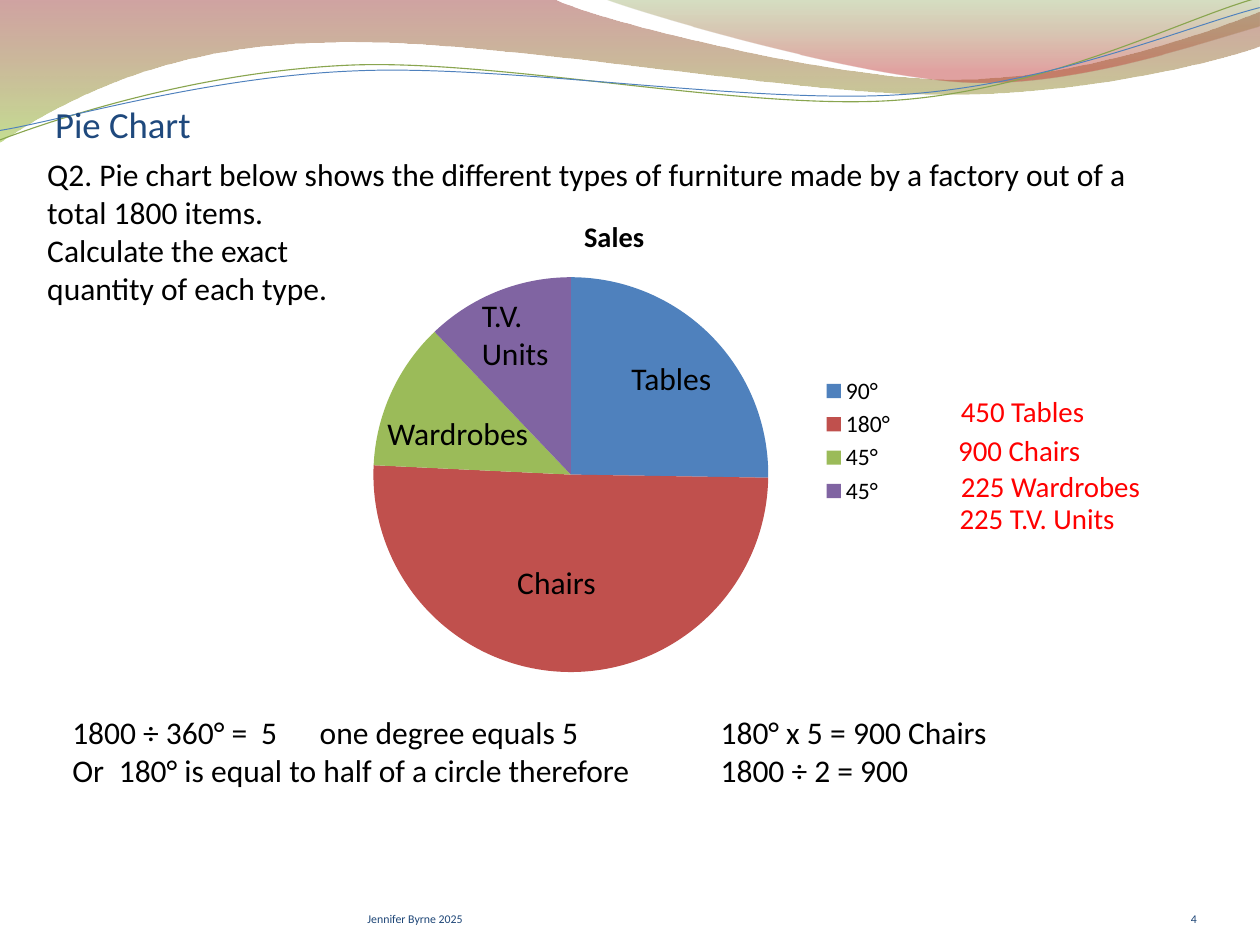
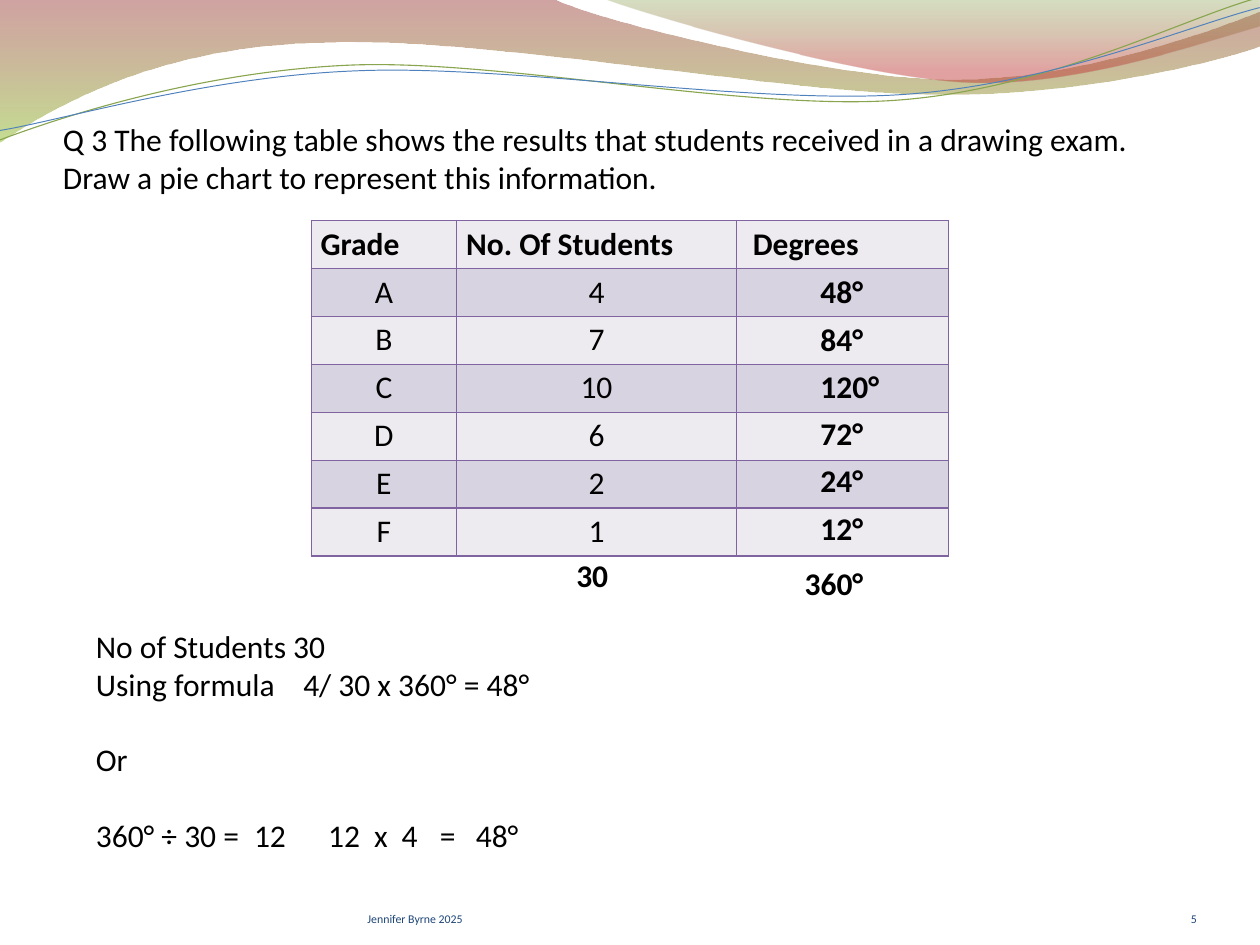
from lxml import etree
from pptx import Presentation
from pptx.chart.data import CategoryChartData
from pptx.dml.color import RGBColor
from pptx.enum.chart import XL_CHART_TYPE, XL_LEGEND_POSITION
from pptx.enum.text import MSO_ANCHOR, MSO_AUTO_SIZE, PP_ALIGN
from pptx.oxml.ns import qn
from pptx.util import Pt

PIE, LEGEND_RIGHT = XL_CHART_TYPE.PIE, XL_LEGEND_POSITION.RIGHT
TOP, BOTTOM, NO_FIT = MSO_ANCHOR.TOP, MSO_ANCHOR.BOTTOM, MSO_AUTO_SIZE.NONE
LEFT, CENTER, RIGHT = PP_ALIGN.LEFT, PP_ALIGN.CENTER, PP_ALIGN.RIGHT
FONT = "Calibri"
COLORS = {
    "text": "000000", "heading": "1F497D", "footer": "1E4677", "answer": "FF0000",
    "blue": "4F81BD", "red": "C0504D", "green": "9BBB59", "purple": "8064A2",
    "wave_line": "89A54F", "row_light": "EDEAF0", "row_dark": "D8D3E0",
}
C = {name: RGBColor.from_string(value) for name, value in COLORS.items()}


def add_wave(s, start, segments):
    fb = s.shapes.build_freeform(Pt(start[0]), Pt(start[1]), scale=1.0)
    points = [(Pt(x), Pt(y)) for seg in segments for x, y in zip(seg[::2], seg[1::2])]
    fb.add_line_segments(points, close=len(segments[-1]) == 2)
    sp = fb.convert_to_shape()
    sp.shadow.inherit = False
    lines = sp.element.iter(qn("a:lnTo"))
    steps = [[line for _, line in zip(seg[::2], lines)] for seg in segments]
    for first, *others in steps:
        if others:
            first.tag = qn("a:cubicBezTo")
            for line in others:
                first.append(line[0])
                line.getparent().remove(line)
    return sp


def add_text(shape, lines, size=24, color="text", bold=False, align=LEFT, anchor=TOP,
             insets=(7.2, 3.6, 7.2, 3.6), wrap=True, tabs=None):
    tf = shape.text_frame
    tf.word_wrap = wrap
    tf.auto_size = NO_FIT
    tf.vertical_anchor = anchor
    tf.margin_left, tf.margin_top, tf.margin_right, tf.margin_bottom = map(Pt, insets)
    for i, line in enumerate(lines):
        p = tf.add_paragraph() if i else tf.paragraphs[0]
        p.alignment = align
        if tabs and tabs[i]:
            tab_list = etree.SubElement(p._p.get_or_add_pPr(), qn("a:tabLst"))
            for pos in tabs[i]:
                etree.SubElement(tab_list, qn("a:tab"), pos=str(Pt(pos)), algn="l")
        for j, part in enumerate(line.split("\n")):
            if j:
                p.add_line_break()
            r = p.add_run()
            r.text = part
            r.font.name = FONT
            r.font.size = Pt(size)
            r.font.bold = bold
            r.font.color.rgb = C[color]
    return tf


prs = Presentation()
prs.slide_width, prs.slide_height = Pt(960), Pt(720)
layout = prs.slide_layouts[5]
pie_slide = prs.slides.add_slide(layout)
table_slide = prs.slides.add_slide(layout)

bands = [
    ((0, -0.7), [(422.6, -0.7), (456.5, 15.8, 637.2, 60.5, 727.9, 60.5),
                 (818.6, 60.5, 920.2, 24.5, 959.8, 8.6), (961.2, 34.6),
                 (944, 41.8, 835.2, 72.7, 715.7, 72), (596.9, 72, 366.5, 26.6, 247, 32.4),
                 (123.1, 33.8, 43.9, 79.2, -0.7, 108.7), (0, -0.7)],
     [(0, "973330", 45), (1, "95C238", 55)]),
    ((460, -0.7), [(488.9, 10.8, 654.5, 59, 738, 62.6), (821.5, 66.2, 923, 30.2, 959.8, 20.2),
                   (959.8, 0), (460, -0.7)],
     [(0, "769537", 30), (0.8, "BE3330", 45)]),
]
curves = [
    ((0, 106.6), [(46.1, 89.3, 151.2, 54.7, 265.7, 49.7), (379.4, 44.6, 568.8, 85, 684, 76.3),
                  (799.9, 67.7, 900.7, 14.4, 957.6, -1.4)], "wave_line", 0.85),
    ((0, 99.4), [(45.4, 92.2, 157, 58.3, 271.4, 54), (386.6, 49, 573.1, 79.9, 688.3, 72),
                 (802.8, 64.1, 903.6, 20.2, 959.8, 5.8)], "blue", 0.75),
]
waves = []
for start, segments, stops in bands:
    sp = add_wave(pie_slide, start, segments)
    sp.line.fill.background()
    sp.fill.gradient()
    sp.fill.gradient_angle = 270
    for stop, (pos, color, _) in zip(sp.fill.gradient_stops, stops):
        stop.position = pos
        stop.color.rgb = RGBColor.from_string(color)
    for clr, (_, _, opacity) in zip(sp.element.spPr.iter(qn("a:srgbClr")), stops):
        etree.SubElement(clr, qn("a:alpha"), val=str(opacity * 1000))
    waves.append(sp)
for start, segments, color, width in curves:
    sp = add_wave(pie_slide, start, segments)
    sp.fill.background()
    sp.line.color.rgb = C[color]
    sp.line.width = Pt(width)
    waves.append(sp)
for sp in waves:
    layout.shapes.element.append(sp.element)

titles = [
    (pie_slide, (36, 49, 858, 213), 28.6,
     "Q2. Pie chart below shows the different types of furniture made by a factory "
     "out of a total 1800 items.\nCalculate the exact\nquantity of each type."),
    (table_slide, (48, 29, 864, 120), 0,
     "Q 3 The following table shows the results that students received in a drawing exam. "
     "Draw a pie chart to represent this information."),
]
for number, (s, box, inset, text) in enumerate(titles, 4):
    title = s.shapes.title
    title.left, title.top, title.width, title.height = map(Pt, box)
    add_text(title, [text], anchor=BOTTOM, insets=(0, 3.6, 0, inset))
    for x, w, footer, align in ((280, 352, "Jennifer Byrne 2025", LEFT), (832, 80, str(number), RIGHT)):
        sp = s.shapes.add_textbox(Pt(x), Pt(667.4), Pt(w), Pt(38))
        add_text(sp, [footer], 9, "footer", align=align, anchor=BOTTOM, insets=(0, 0, 0, 0))

data = CategoryChartData()
data.categories = ["90°", "180°", "45°", "45°"]
data.add_series("Sales", [25, 50, 12, 12])
chart = pie_slide.shapes.add_chart(PIE, Pt(246), Pt(150), Pt(444), Pt(372), data).chart
chart.font.name = FONT
chart.font.size = Pt(18)
chart.font.color.rgb = C["text"]
chart.has_title = True
r = chart.chart_title.text_frame.paragraphs[0].add_run()
r.text = "Sales"
r.font.name = FONT
r.font.size = Pt(21.6)
r.font.bold = True
r.font.color.rgb = C["text"]
chart.has_legend = True
chart.legend.position = LEGEND_RIGHT
chart.legend.include_in_layout = False
plot = chart.plots[0]
plot.vary_by_categories = True
for i, color in enumerate(("blue", "red", "green", "purple")):
    fill = plot.series[0].points[i].format.fill
    fill.solid()
    fill.fore_color.rgb = C[color]

slice_labels = [
    (387, 425.5, 75, 36, ["Chairs"]),
    (474, 270, 76, 36, ["Tables"]),
    (288, 312, 123, 36, ["Wardrobes"]),
    (360, 222, 66, 65.5, ["T.V.", "Units"]),
]
for x, y, w, h, lines in slice_labels:
    add_text(pie_slide.shapes.add_textbox(Pt(x), Pt(y), Pt(w), Pt(h)), lines, wrap=False)

sp = pie_slide.shapes.add_textbox(Pt(48), Pt(540), Pt(834), Pt(94))
add_text(sp, ["1800 ÷ 360° =\t5\tone degree equals 5\t180° x 5 =\t900 Chairs",
              "Or\t180° is equal to half of a circle therefore\t1800 ÷ 2 = 900"],
         tabs=[(144, 188.5, 494, 595), (35.5, 494)])

sp = pie_slide.shapes.add_textbox(Pt(42), Pt(53), Pt(864), Pt(58.5))
add_text(sp, ["Pie Chart"], 28, "heading", anchor=BOTTOM, insets=(0, 3.6, 0, 0))

answers = [
    (725, 296.6, 110, "450 Tables"),
    (723, 326.2, 109, "900 Chairs"),
    (725, 353.5, 153, "225 Wardrobes"),
    (724, 378, 134, "225 T.V. Units"),
]
for x, y, w, text in answers:
    add_text(pie_slide.shapes.add_textbox(Pt(x), Pt(y), Pt(w), Pt(34)), [text], 22, "answer", wrap=False)

rows = [("Grade", "No. Of Students", " Degrees")]
rows += [(grade, count, "") for grade, count in zip("ABCDEF", ("4", "7", "10", "6", "2", "1"))]
table = table_slide.shapes.add_table(7, 3, Pt(237), Pt(168), Pt(486), Pt(252)).table
table.first_row = table.horz_banding = False
for col, width in zip(table.columns, (111, 213, 162)):
    col.width = Pt(width)
for i, row in enumerate(rows):
    table.rows[i].height = Pt(36)
    for j, text in enumerate(row):
        cell = table.cell(i, j)
        cell.fill.solid()
        cell.fill.fore_color.rgb = C["row_dark" if i % 2 else "row_light"]
        tc_pr = cell._tc.get_or_add_tcPr()
        for k, side in enumerate(("lnL", "lnR", "lnT", "lnB")):
            ln = etree.Element(qn(f"a:{side}"), w=str(Pt(1)))
            solid = etree.SubElement(ln, qn("a:solidFill"))
            etree.SubElement(solid, qn("a:srgbClr"), val=COLORS["purple"])
            tc_pr.insert(k, ln)
        if text:
            p = cell.text_frame.paragraphs[0]
            p.alignment = CENTER if i else LEFT
            r = p.add_run()
            r.text = text
            r.font.name = FONT
            r.font.size = Pt(24)
            r.font.bold = i == 0
            r.font.color.rgb = C["text"]

degrees = ["48°", "84°", "120°", "72°", "24°", "12°"]
figures = [(618, 204 + 36 * i, text) for i, text in enumerate(degrees)]
figures += [(606, 426, "360°"), (432, 420, "30")]
for x, y, text in figures:
    sp = table_slide.shapes.add_textbox(Pt(x), Pt(y), Pt(12 + 12 * len(text)), Pt(36))
    add_text(sp, [text], bold=True, wrap=False)

sp = table_slide.shapes.add_textbox(Pt(66), Pt(474), Pt(750), Pt(181.5))
tf = add_text(sp, ["No of Students 30", "Using formula\t4/ 30 x 360° = 48°", "Or",
                   "360° ÷ 30 =\t12\t12\tx\t4\t=\t48°"],
              tabs=[(), (158,), (), (120.5, 177, 212, 233, 262, 289.5)])
for p in tf.paragraphs[2:]:
    p.space_before = Pt(29)

prs.save("out.pptx")
